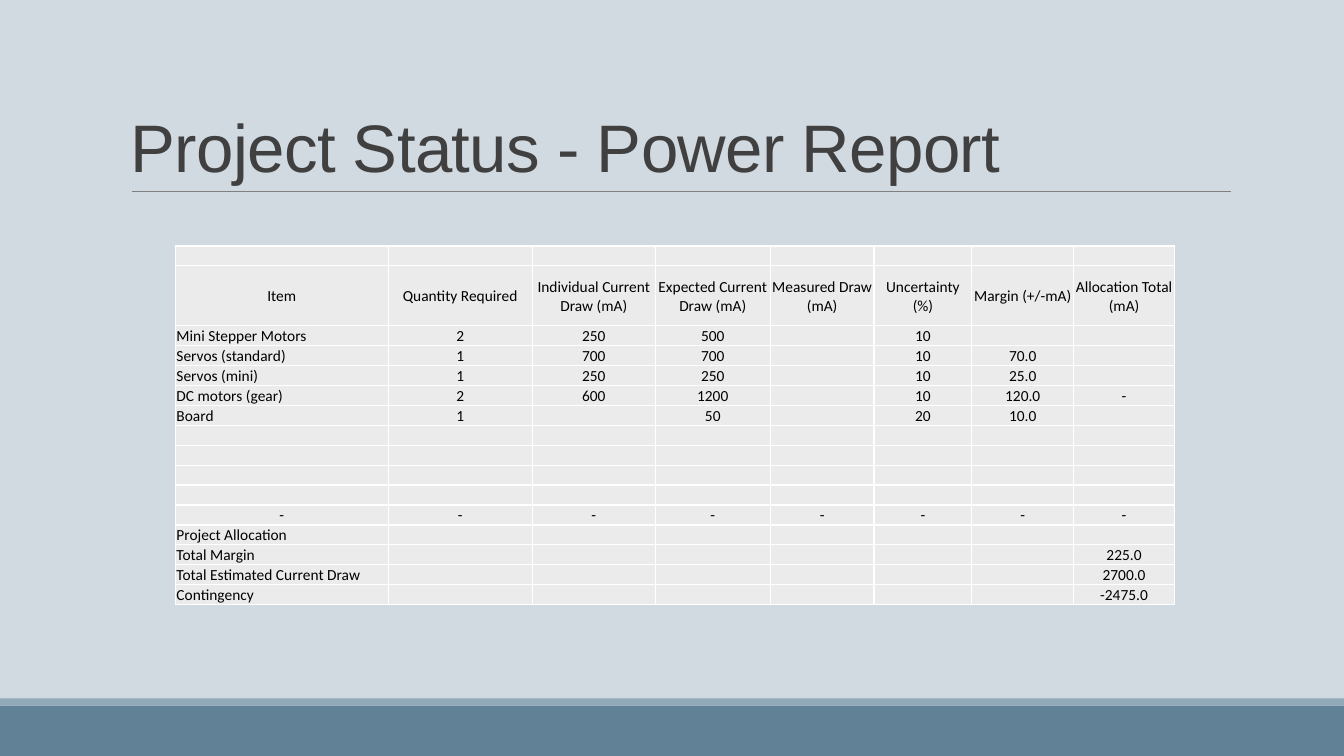
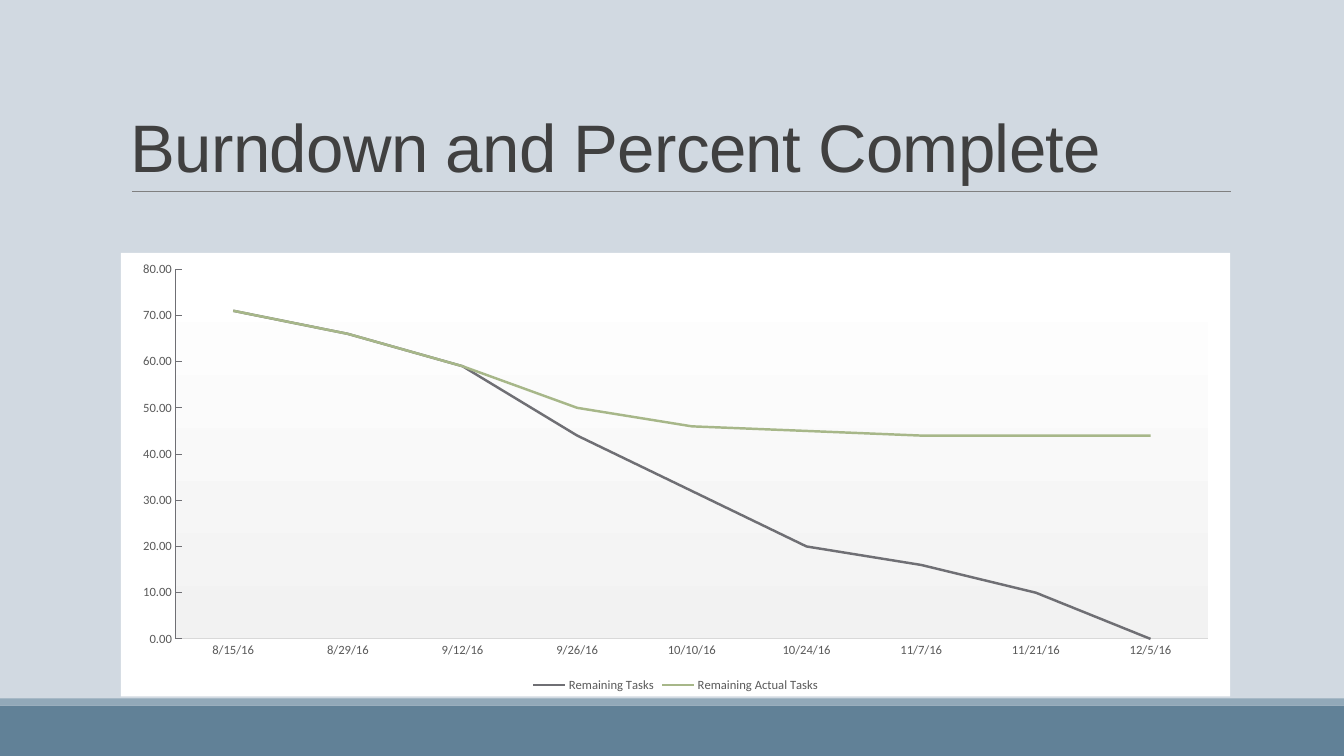
"""Builds a power report table and a burndown chart on a shared slide frame."""
from lxml.etree import SubElement
from pptx import Presentation
from pptx.chart.data import CategoryChartData
from pptx.dml.color import RGBColor
from pptx.enum.chart import XL_CHART_TYPE as ChartType, XL_LEGEND_POSITION as LegendPosition
from pptx.enum.chart import XL_TICK_MARK as TickMark
from pptx.enum.shapes import MSO_CONNECTOR as Connector, MSO_SHAPE as Shape
from pptx.enum.text import MSO_ANCHOR as Anchor, PP_ALIGN as Align
from pptx.oxml import parse_xml
from pptx.oxml.ns import nsdecls, qn
from pptx.util import Inches, Pt

WIDTH, HEIGHT = 13.33, 7.5
COLORS = {
    "background": "D1D9E1", "footer": "618197", "footer edge": "92A9B9",
    "rule": "808080", "title": "404040", "cell": "EBEBEB", "border": "FFFFFF",
    "cell text": "000000", "chart": "FFFFFF", "plot end": "F2F2F2",
    "axis text": "595959", "category line": "D9D9D9", "value line": "6F6F74",
    "planned": "6F6F74", "actual": "A7B789",
}
BANDS = [("footer", 7, 0.5), ("footer edge", 6.93, 0.07)]
TITLE_FONT, BODY_FONT = "Arial", "Calibri"

POWER_TITLE = "Project Status - Power Report"
COLUMN_WIDTHS = [2.11, 1.43, 1.22, 1.14, 1.03, 0.97, 1.01, 1]
HEADER_ROW, HEADER_SHARE, TABLE_HEIGHT = 1, 3, 3.56
POWER_ROWS = [
    [],
    ["Item", "Quantity Required", "Individual Current Draw (mA)", "Expected Current Draw (mA)",
     "Measured Draw (mA)", "Uncertainty (%)", "Margin (+/-mA)", "Allocation Total (mA)"],
    ["Mini Stepper Motors", "2", "250", "500", "", "10"],
    ["Servos (standard)", "1", "700", "700", "", "10", "70.0"],
    ["Servos (mini)", "1", "250", "250", "", "10", "25.0"],
    ["DC motors (gear)", "2", "600", "1200", "", "10", "120.0", "-"],
    ["Board", "1", "", "50", "", "20", "10.0"],
    [], [], [], [],
    ["-"] * len(COLUMN_WIDTHS),
    ["Project Allocation"],
    ["Total Margin", "", "", "", "", "", "", "225.0"],
    ["Total Estimated Current Draw", "", "", "", "", "", "", "2700.0"],
    ["Contingency", "", "", "", "", "", "", "-2475.0"],
]

BURNDOWN_TITLE = "Burndown and Percent Complete"
SPRINT_DATES = ["8/15/16", "8/29/16", "9/12/16", "9/26/16", "10/10/16",
                "10/24/16", "11/7/16", "11/21/16", "12/5/16"]
TASK_COUNTS = [
    ("Remaining Tasks", "planned", [71, 66, 59, 44, 32, 20, 16, 10, 0]),
    ("Remaining Actual Tasks", "actual", [71, 66, 59, 50, 46, 45, 44, 44, 44]),
]


def color(name):
    return RGBColor.from_string(COLORS[name])


def style_font(font, size, color_name, family=BODY_FONT):
    font.size, font.name = Pt(size), family
    font.color.rgb = color(color_name)


def style_line(line, width, color_name):
    line.width = Pt(width)
    line.color.rgb = color(color_name)


def add_framed_slide(deck, title):
    slide = deck.slides.add_slide(deck.slide_layouts[6])
    slide.background.fill.solid()
    slide.background.fill.fore_color.rgb = color("background")
    for name, top, height in BANDS:
        band = slide.shapes.add_shape(Shape.RECTANGLE, 0, Inches(top), Inches(WIDTH), Inches(height))
        band.shadow.inherit = False
        band.fill.solid()
        band.fill.fore_color.rgb = color(name)
        band.line.fill.background()
    rule = slide.shapes.add_connector(
        Connector.STRAIGHT, Inches(1.31), Inches(1.9), Inches(12.21), Inches(1.9))
    style_line(rule.line, 0.5, "rule")
    SubElement(rule._element.spPr, qn("a:effectLst"))

    heading = slide.shapes.add_textbox(Inches(1.2), Inches(0.31), Inches(11), Inches(1.59)).text_frame
    heading.word_wrap = True
    heading.vertical_anchor = Anchor.BOTTOM
    paragraph = heading.paragraphs[0]
    paragraph.line_spacing = 0.85
    run = paragraph.add_run()
    run.text = title
    style_font(run.font, 48, "title", TITLE_FONT)
    run.font._element.set("spc", "-50")
    return slide


def style_cell(cell):
    properties = cell._tc.get_or_add_tcPr()
    for side in ("lnL", "lnR", "lnT", "lnB"):
        properties.append(parse_xml(
            f'<a:{side} {nsdecls("a")} w="12700"><a:solidFill>'
            f'<a:srgbClr val="{COLORS["border"]}"/></a:solidFill></a:{side}>'))
    cell.fill.solid()
    cell.fill.fore_color.rgb = color("cell")
    cell.margin_left = cell.margin_right = cell.margin_top = Inches(0.01)
    cell.margin_bottom = 0


def add_power_table(slide):
    table = slide.shapes.add_table(
        len(POWER_ROWS), len(COLUMN_WIDTHS), Inches(1.74), Inches(2.44),
        Inches(sum(COLUMN_WIDTHS)), Inches(TABLE_HEIGHT)).table
    table.first_row = table.horz_banding = False
    for column, width in zip(table.columns, COLUMN_WIDTHS):
        column.width = Inches(width)
    unit = TABLE_HEIGHT / (len(POWER_ROWS) - 1 + HEADER_SHARE)
    for row_index, values in enumerate(POWER_ROWS):
        is_header = row_index == HEADER_ROW
        table.rows[row_index].height = Inches(unit * (HEADER_SHARE if is_header else 1))
        for column_index in range(len(COLUMN_WIDTHS)):
            cell = table.cell(row_index, column_index)
            style_cell(cell)
            cell.vertical_anchor = Anchor.MIDDLE if is_header else Anchor.BOTTOM
            paragraph = cell.text_frame.paragraphs[0]
            value = values[column_index] if column_index < len(values) else ""
            if not value:
                SubElement(paragraph._p, qn("a:endParaRPr"), sz="1100")
                continue
            is_label = column_index == 0 and not is_header and value != "-"
            paragraph.alignment = Align.LEFT if is_label else Align.CENTER
            run = paragraph.add_run()
            run.text = value
            style_font(run.font, 11, "cell text")


def fill_chart(chart):
    space = chart._chartSpace
    space.find(qn("c:chart")).addnext(parse_xml(
        f'<c:spPr {nsdecls("c", "a")}><a:solidFill><a:srgbClr val="{COLORS["chart"]}"/>'
        '</a:solidFill><a:ln><a:noFill/></a:ln></c:spPr>'))
    space.find(".//" + qn("c:plotArea")).append(parse_xml(
        f'<c:spPr {nsdecls("c", "a")}><a:gradFill><a:gsLst>'
        f'<a:gs pos="0"><a:srgbClr val="{COLORS["chart"]}"/></a:gs>'
        f'<a:gs pos="100000"><a:srgbClr val="{COLORS["plot end"]}"/></a:gs>'
        '</a:gsLst><a:lin ang="5400000" scaled="0"/></a:gradFill></c:spPr>'))


def add_burndown_chart(slide):
    burndown = CategoryChartData()
    burndown.categories = SPRINT_DATES
    for name, _, counts in TASK_COUNTS:
        burndown.add_series(name, counts)
    chart = slide.shapes.add_chart(
        ChartType.LINE, Inches(1.2), Inches(2.51), Inches(11), Inches(4.4), burndown).chart
    style_font(chart.font, 10, "cell text")
    chart.has_title = False
    chart.has_legend = True
    chart.legend.position = LegendPosition.BOTTOM
    chart.legend.include_in_layout = False
    style_font(chart.legend.font, 9, "axis text")

    dates, tasks = chart.category_axis, chart.value_axis
    for axis, line_color, tick in ((dates, "category line", TickMark.NONE),
                                   (tasks, "value line", TickMark.INSIDE)):
        axis.has_major_gridlines = False
        axis.major_tick_mark, axis.minor_tick_mark = tick, TickMark.NONE
        style_font(axis.tick_labels.font, 9, "axis text")
        style_line(axis.format.line, 0.75, line_color)
    tasks.minimum_scale, tasks.maximum_scale, tasks.major_unit = 0, 80, 10
    tasks.tick_labels.number_format = "#,##0.00"
    tasks.tick_labels.number_format_is_linked = False

    chart.plots[0].vary_by_categories = False
    for series, (_, line_color, _) in zip(chart.plots[0].series, TASK_COUNTS):
        series.smooth = False
        style_line(series.format.line, 1.75, line_color)
    fill_chart(chart)


def main():
    deck = Presentation()
    deck.slide_width, deck.slide_height = Inches(WIDTH), Inches(HEIGHT)
    add_power_table(add_framed_slide(deck, POWER_TITLE))
    add_burndown_chart(add_framed_slide(deck, BURNDOWN_TITLE))
    deck.save("out.pptx")


if __name__ == "__main__":
    main()
